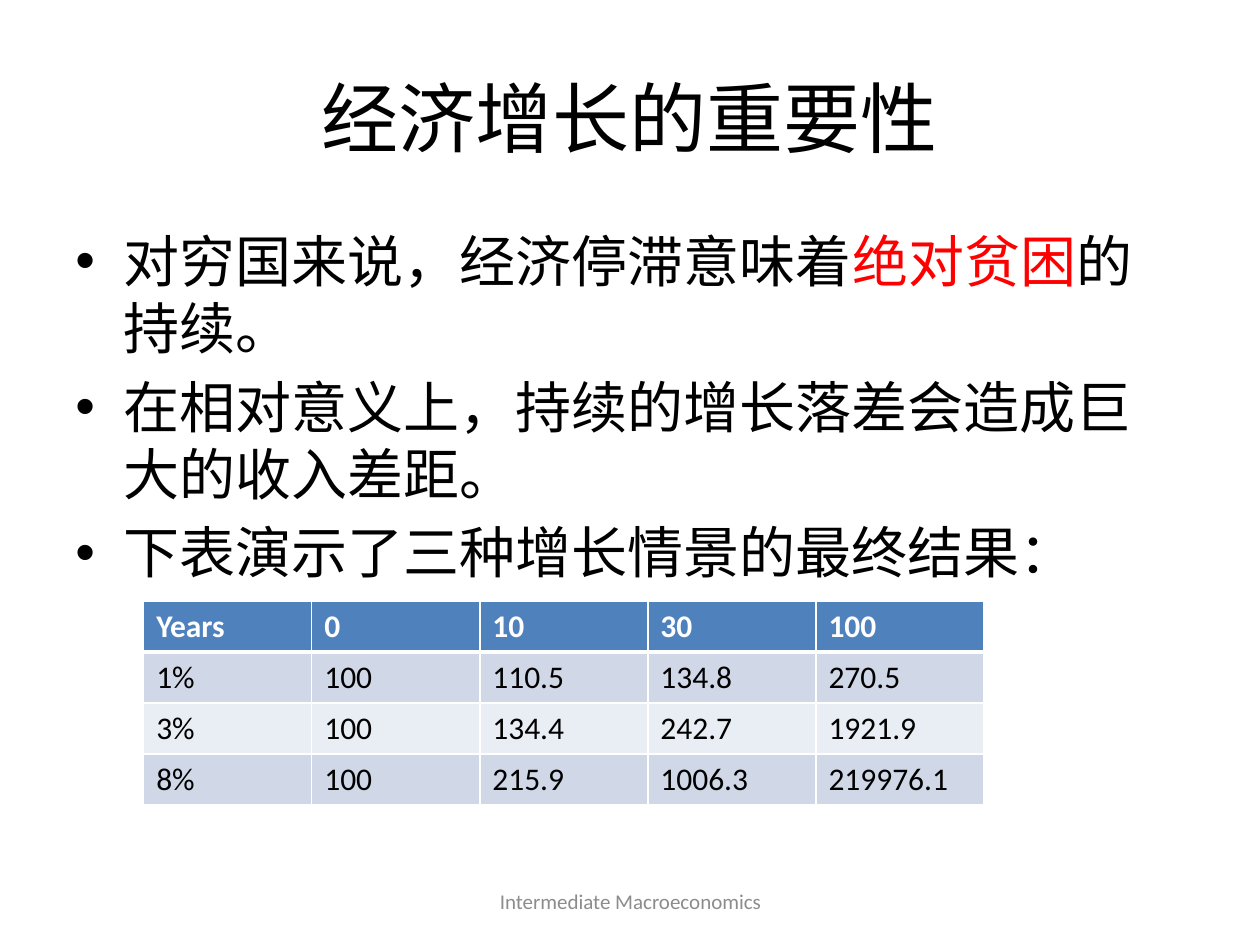
from dataclasses import dataclass
from typing import NamedTuple

from lxml import etree
from pptx import Presentation
from pptx.dml.color import RGBColor
from pptx.enum.text import MSO_ANCHOR, PP_ALIGN
from pptx.oxml.ns import qn
from pptx.util import Inches, Pt

CENTER, LEFT = PP_ALIGN.CENTER, PP_ALIGN.LEFT
MIDDLE, TOP = MSO_ANCHOR.MIDDLE, MSO_ANCHOR.TOP
TITLE_ONLY = 5


@dataclass(frozen=True)
class Theme:
    font: str = "Calibri"
    black: str = "000000"
    white: str = "FFFFFF"
    accent: str = "FF0000"
    muted: str = "8C8C8C"
    header: str = "4F81BD"
    bands: tuple[str, str] = ("D0D8E8", "E9EDF4")
    title_size: int = 44
    body_size: int = 32
    table_size: int = 18
    footer_size: int = 12


class Area(NamedTuple):
    left: float
    top: float
    width: float
    height: float

    def lengths(self) -> list[int]:
        return [Inches(value) for value in self]


class Span(NamedTuple):
    text: str
    color: str


THEME = Theme()
TITLE_AREA = Area(0.5, 0.3, 9, 1.25)
BODY_AREA = Area(0.5, 1.75, 9, 2.94)
TABLE_AREA = Area(1.14, 4.77, 6.67, 1.62)
FOOTER_AREA = Area(3.42, 6.95, 3.17, 0.4)
BULLET_INDENT = Inches(0.38)

POINTS = [
    [
        Span("对穷国来说，经济停滞意味着", THEME.black),
        Span("绝对贫困", THEME.accent),
        Span("的持续。", THEME.black),
    ],
    [Span("在相对意义上，持续的增长落差会造成巨大的收入差距。", THEME.black)],
    [Span("下表演示了三种增长情景的最终结果：", THEME.black)],
]
GROWTH_ROWS = [
    ["Years", "0", "10", "30", "100"],
    ["1%", "100", "110.5", "134.8", "270.5"],
    ["3%", "100", "134.4", "242.7", "1921.9"],
    ["8%", "100", "215.9", "1006.3", "219976.1"],
]


def add_span(para, text: str, *, size: int, color: str = THEME.black,
             bold: bool = False, align=LEFT) -> None:
    para.alignment = align
    span = para.add_run()
    span.text = text
    span.font.name = THEME.font
    span.font.size = Pt(size)
    span.font.bold = bold
    span.font.color.rgb = RGBColor.from_string(color)


def prepare_frame(box, anchor):
    frame = box.text_frame
    frame.word_wrap = True
    frame.vertical_anchor = anchor
    return frame


def add_bullet(para) -> None:
    para.space_before = Pt(0.2 * THEME.body_size)
    properties = para._p.get_or_add_pPr()
    properties.set("marL", str(BULLET_INDENT))
    properties.set("indent", str(-BULLET_INDENT))
    etree.SubElement(properties, qn("a:buFont"), typeface="Arial")
    etree.SubElement(properties, qn("a:buChar"), char="•")


def add_title(page, text: str) -> None:
    box = page.shapes.title
    box.left, box.top, box.width, box.height = TITLE_AREA.lengths()
    para = prepare_frame(box, MIDDLE).paragraphs[0]
    add_span(para, text, size=THEME.title_size, align=CENTER)


def add_points(page, points: list[list[Span]]) -> None:
    frame = prepare_frame(page.shapes.add_textbox(*BODY_AREA.lengths()), TOP)
    for index, point in enumerate(points):
        para = frame.add_paragraph() if index else frame.paragraphs[0]
        add_bullet(para)
        for text, color in point:
            add_span(para, text, size=THEME.body_size, color=color)


def set_borders(cell, widths: dict[str, int]) -> None:
    """Draw white borders; widths maps a side (L, R, T, B) to points."""
    properties = cell._tc.get_or_add_tcPr()
    for side, width in widths.items():
        line = etree.SubElement(properties, qn(f"a:ln{side}"), w=str(Pt(width)))
        fill = etree.SubElement(line, qn("a:solidFill"))
        etree.SubElement(fill, qn("a:srgbClr"), val=THEME.white)


def add_growth_table(page, rows: list[list[str]]) -> None:
    table = page.shapes.add_table(len(rows), len(rows[0]), *TABLE_AREA.lengths()).table
    for row_index, values in enumerate(rows):
        is_header = row_index == 0
        fill = THEME.header if is_header else THEME.bands[(row_index - 1) % 2]
        widths = {"L": 1, "R": 1, "T": 3 if row_index == 1 else 1, "B": 3 if is_header else 1}
        for column_index, value in enumerate(values):
            cell = table.cell(row_index, column_index)
            set_borders(cell, widths)
            cell.fill.solid()
            cell.fill.fore_color.rgb = RGBColor.from_string(fill)
            add_span(cell.text_frame.paragraphs[0], value, size=THEME.table_size,
                     color=THEME.white if is_header else THEME.black, bold=is_header)


def add_footer(page, text: str) -> None:
    box = page.shapes.add_textbox(*FOOTER_AREA.lengths())
    para = prepare_frame(box, MIDDLE).paragraphs[0]
    add_span(para, text, size=THEME.footer_size, color=THEME.muted, align=CENTER)


def main() -> None:
    deck = Presentation()
    deck.slide_width, deck.slide_height = Inches(10), Inches(7.5)
    page = deck.slides.add_slide(deck.slide_layouts[TITLE_ONLY])
    add_title(page, "经济增长的重要性")
    add_points(page, POINTS)
    add_footer(page, "Intermediate Macroeconomics")
    add_growth_table(page, GROWTH_ROWS)
    deck.save("out.pptx")


if __name__ == "__main__":
    main()
